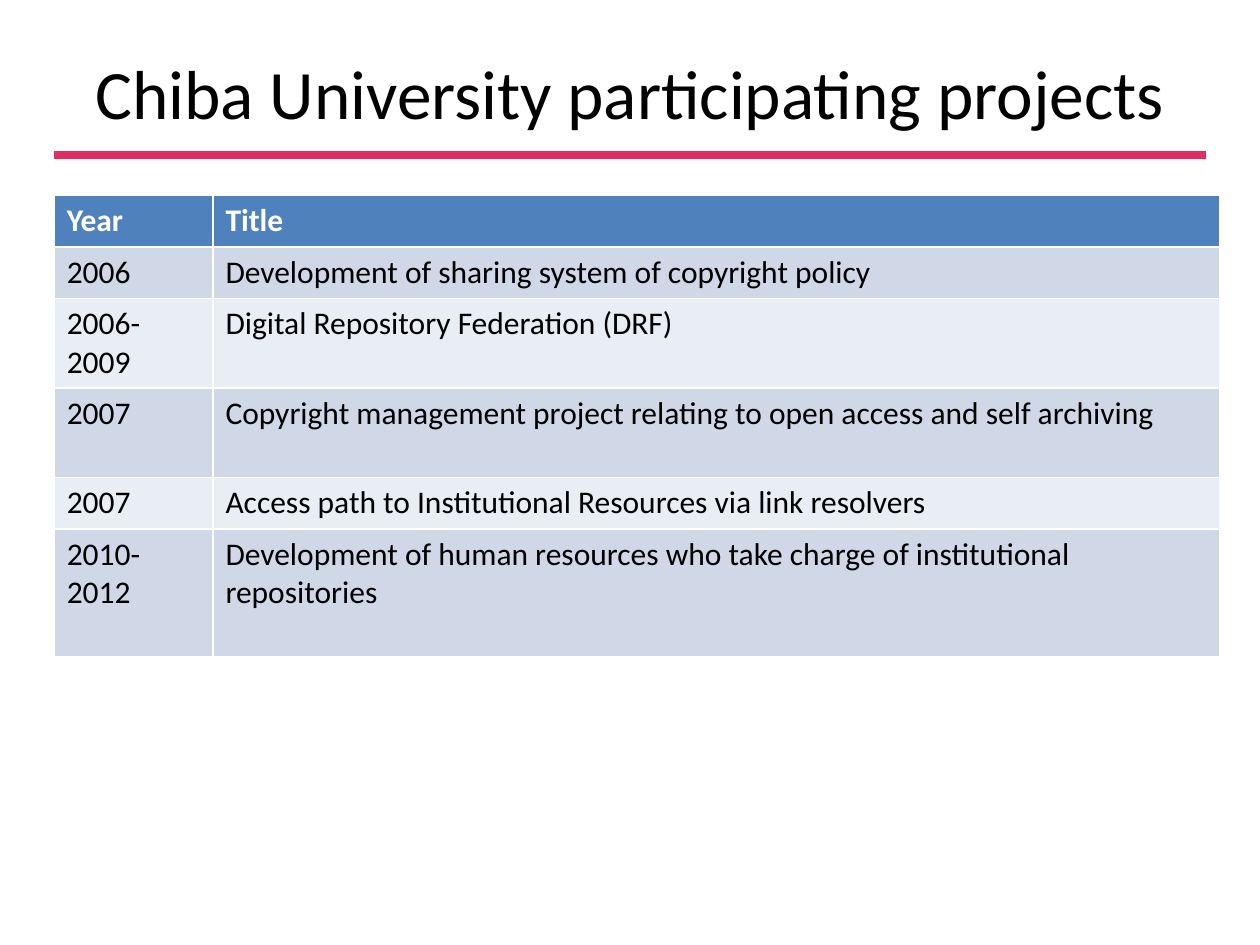
import pptx
import pptx.dml.color
import pptx.enum.shapes
import pptx.enum.text
import pptx.oxml.ns
import pptx.util
import lxml.etree

Inches = pptx.util.Inches
RGBColor = pptx.dml.color.RGBColor

BLACK = RGBColor(0x00, 0x00, 0x00)
WHITE = RGBColor(0xFF, 0xFF, 0xFF)
PINK = RGBColor(0xE2, 0x2C, 0x64)
HEADER_BLUE = RGBColor(0x4F, 0x81, 0xBD)
BANDS = [RGBColor(0xE9, 0xED, 0xF4), RGBColor(0xD0, 0xD8, 0xE8)]

LEFT = 0.43
COLUMN_WIDTHS = [1.26, 7.99]
ONE_LINE = 0.41
EXTRA_LINE = 0.3

# Year, title and number of text lines the row has room for
PROJECTS = [
    ("Year", "Title", 1),
    ("2006", "Development of sharing system of copyright policy", 1),
    ("2006-2009", "Digital Repository Federation (DRF)", 2),
    ("2007", "Copyright management project relating to open access and self archiving", 2),
    ("2007", "Access path to Institutional Resources via link resolvers", 1),
    ("2010-2012", "Development of human resources who take charge of institutional repositories", 3),
]


def format_font(font, **values):
    for name, value in values.items():
        if name == "color":
            font.color.rgb = value
        else:
            setattr(font, name, value)


presentation = pptx.Presentation()
presentation.slide_width = Inches(10)
presentation.slide_height = Inches(7.5)
slide = presentation.slides.add_slide(presentation.slide_layouts[5])

# Rule under the title, with equal margins on both sides
rule = slide.shapes.add_connector(
    pptx.enum.shapes.MSO_CONNECTOR.STRAIGHT,
    Inches(LEFT), Inches(1.23), Inches(10 - LEFT), Inches(1.23))
rule.line.color.rgb = PINK
rule.line.width = pptx.util.Pt(4.5)
lxml.etree.SubElement(rule._element.spPr, pptx.oxml.ns.qn("a:effectLst"))

# Title
title = slide.shapes.title
title_box = {"left": 0.5, "top": 0.3, "width": 9, "height": 0.85}
for name, value in title_box.items():
    setattr(title, name, Inches(value))
title.text_frame.text = "Chiba University participating projects"
title.text_frame.vertical_anchor = pptx.enum.text.MSO_ANCHOR.MIDDLE
paragraph = title.text_frame.paragraphs[0]
paragraph.alignment = pptx.enum.text.PP_ALIGN.CENTER
format_font(paragraph.runs[0].font, name="Calibri", size=pptx.util.Pt(39.6), color=BLACK)

# Project table; its default style draws the white borders
row_heights = [ONE_LINE + EXTRA_LINE * (lines - 1) for _, _, lines in PROJECTS]
table = slide.shapes.add_table(
    len(PROJECTS), len(COLUMN_WIDTHS), Inches(LEFT), Inches(1.55),
    Inches(sum(COLUMN_WIDTHS)), Inches(sum(row_heights))).table
for column, width in zip(table.columns, COLUMN_WIDTHS):
    column.width = Inches(width)

for row_index, (year, project, _) in enumerate(PROJECTS):
    table.rows[row_index].height = Inches(row_heights[row_index])
    is_header = row_index == 0
    for column_index, text in enumerate((year, project)):
        cell = table.cell(row_index, column_index)
        cell.fill.solid()
        cell.fill.fore_color.rgb = HEADER_BLUE if is_header else BANDS[row_index % 2]
        cell.text = text
        format_font(cell.text_frame.paragraphs[0].runs[0].font,
                    name="Calibri", size=pptx.util.Pt(18), bold=is_header,
                    color=WHITE if is_header else BLACK)

presentation.save("out.pptx")
